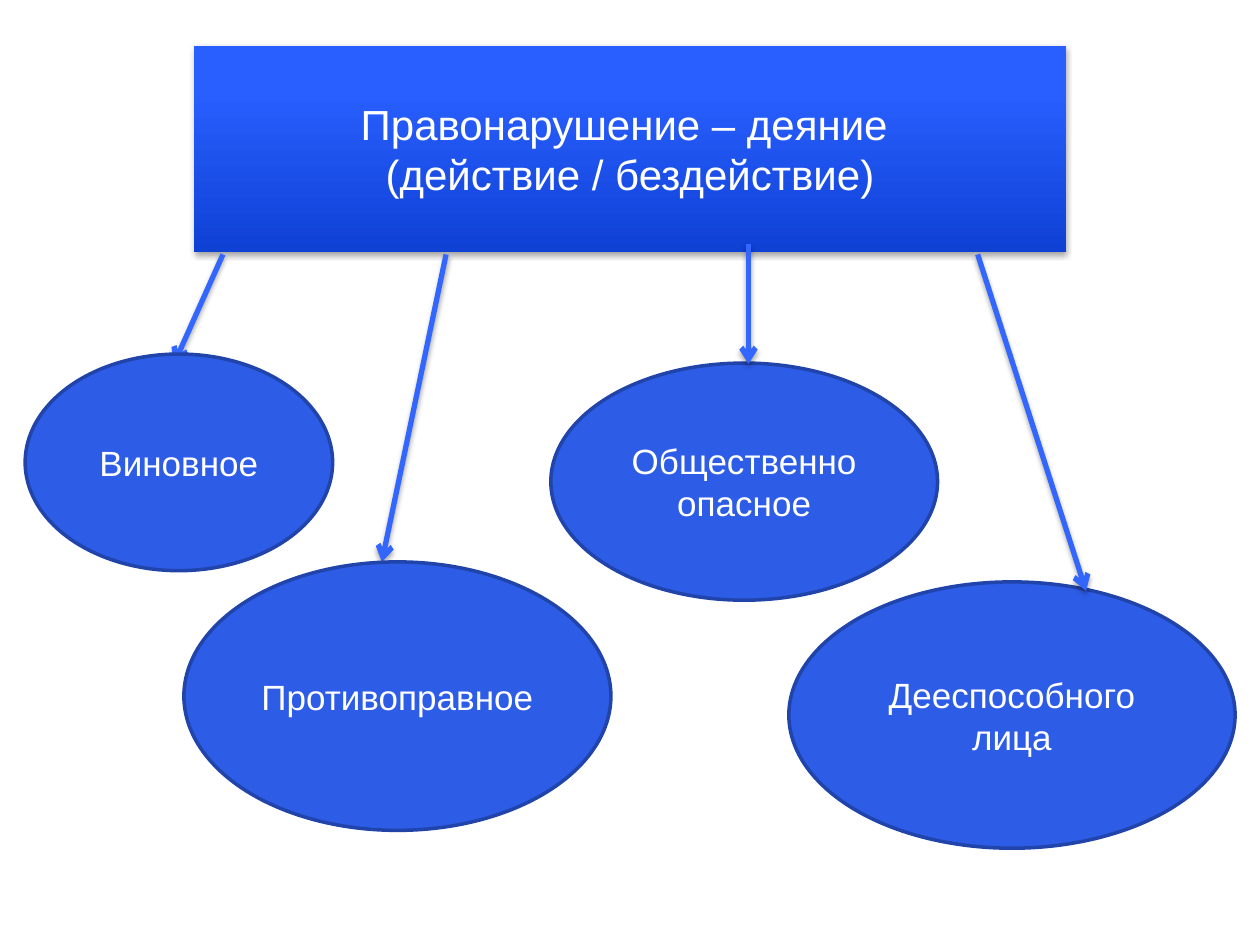
from copy import deepcopy
from pptx import Presentation
from pptx.dml.color import RGBColor
from pptx.enum.shapes import MSO_CONNECTOR, MSO_SHAPE
from pptx.enum.text import MSO_ANCHOR, PP_ALIGN
from pptx.oxml import parse_xml
from pptx.oxml.ns import nsdecls, qn
from pptx.util import Pt

WHITE = RGBColor(0xFF, 0xFF, 0xFF)
BLUE = RGBColor(0x2D, 0x5C, 0xE7)
EDGE = RGBColor(0x21, 0x44, 0xAB)
ARROW = RGBColor(0x33, 0x66, 0xFF)
DARK = RGBColor(0x0F, 0x41, 0xD5)
MID = RGBColor(0x29, 0x5F, 0xFF)
LIGHT = RGBColor(0x2B, 0x60, 0xFF)

SHADE = (
    f'<a:effectLst {nsdecls("a")}>'
    f'<a:outerShdw blurRad="{Pt(3.1)}" dist="{Pt(1.8)}" dir="5400000" rotWithShape="0">'
    '<a:srgbClr val="000000"><a:alpha val="35000"/></a:srgbClr>'
    '</a:outerShdw></a:effectLst>'
)

deck = Presentation()
deck.slide_width, deck.slide_height = Pt(720), Pt(540)
slide = deck.slides.add_slide(deck.slide_layouts[6])
shapes = slide.shapes


def add_node(kind, box, lines, size):
    node = shapes.add_shape(kind, *map(Pt, box))
    frame = node.text_frame
    frame.word_wrap = True
    frame.vertical_anchor = MSO_ANCHOR.MIDDLE
    for i, text in enumerate(lines):
        para = frame.add_paragraph() if i else frame.paragraphs[0]
        para.alignment = PP_ALIGN.CENTER
        run = para.add_run()
        run.text = text
        run.font.name = "Arial"
        run.font.size = Pt(size)
        run.font.color.rgb = WHITE
    return node


def add_oval(box, text):
    oval = add_node(MSO_SHAPE.OVAL, box, [text], 20)
    oval.shadow.inherit = False
    oval.fill.solid()
    oval.fill.fore_color.rgb = BLUE
    oval.line.color.rgb = EDGE
    oval.line.width = Pt(2)


title = add_node(
    MSO_SHAPE.RECTANGLE,
    (110.6, 26.2, 498.8, 117.8),
    ["Правонарушение – деяние ", "(действие / бездействие)"],
    24,
)
title.fill.gradient()
title.fill.gradient_angle = 90
stops = title._element.spPr.find(qn("a:gradFill")).find(qn("a:gsLst"))
stops.append(deepcopy(stops[-1]))
for stop, spot, tone in zip(title.fill.gradient_stops, (0, 0.8, 1), (DARK, MID, LIGHT)):
    stop.position = spot
    stop.color.rgb = tone
title.line.fill.background()
title._element.spPr.append(parse_xml(SHADE))

add_oval((450.8, 332.5, 255, 152.2), "Дееспособного лица")
add_oval((314.8, 207.5, 221, 135.5), "Общественно опасное")

for ends in (
    (427.7, 139.7, 427.7, 208),
    (558.7, 145.4, 620.6, 337.7),
    (127.4, 145.4, 99.4, 208),
    (254.9, 145.4, 218.2, 321.1),
):
    arrow = shapes.add_connector(MSO_CONNECTOR.STRAIGHT, *map(Pt, ends))
    arrow.line.color.rgb = ARROW
    arrow.line.width = Pt(3)
    tip = parse_xml(f'<a:tailEnd {nsdecls("a")} type="arrow"/>')
    arrow.line._get_or_add_ln().append(tip)
    arrow._element.spPr.append(parse_xml(SHADE))

add_oval((105.1, 321.1, 244, 153.4), "Противоправное ")
add_oval((14.4, 202.3, 175.7, 123.8), "Виновное")

deck.save("out.pptx")
